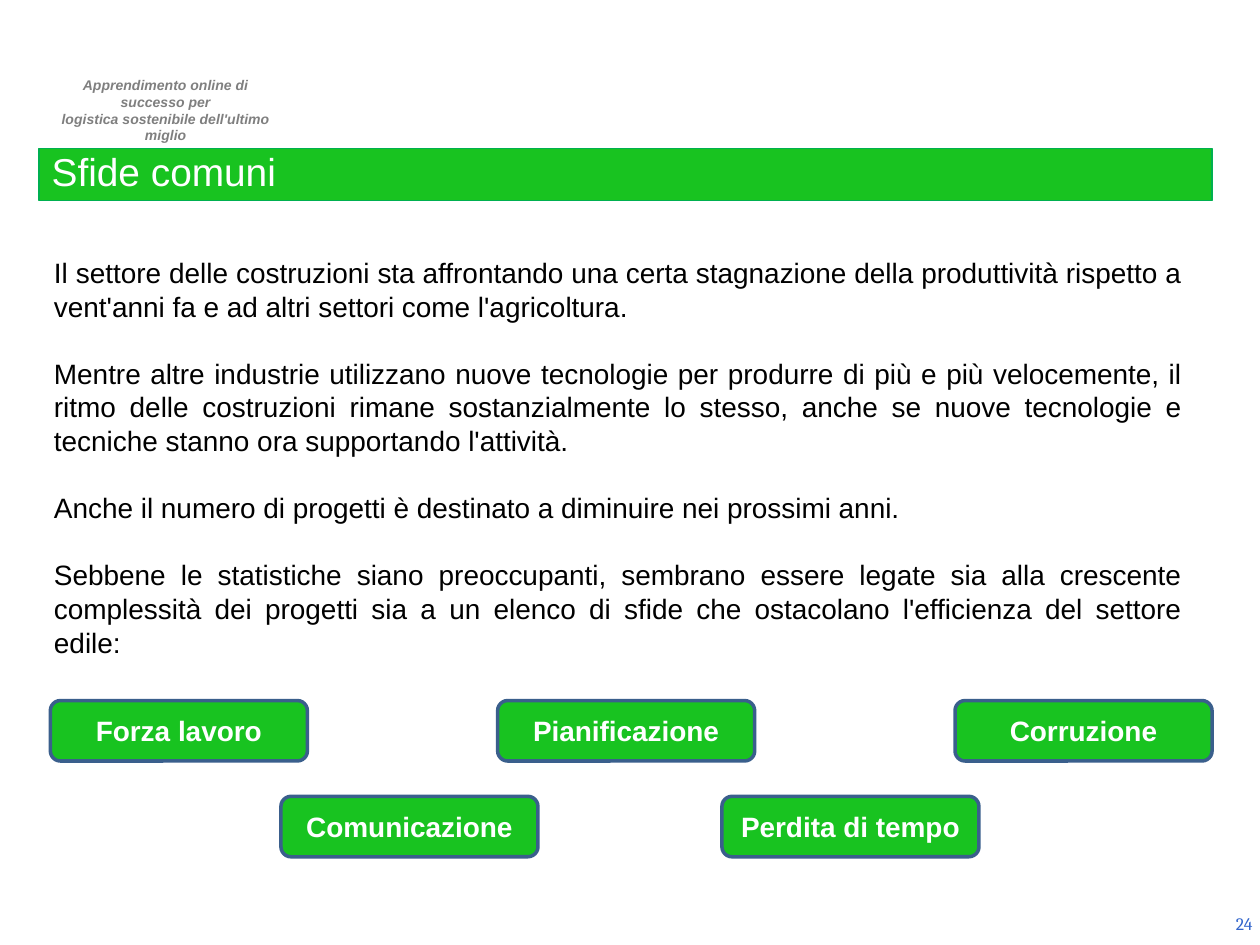
from pptx import Presentation
from pptx.dml.color import RGBColor
from pptx.enum.shapes import MSO_SHAPE
from pptx.enum.text import MSO_ANCHOR, PP_ALIGN
from pptx.util import Inches, Pt

ROUND = MSO_SHAPE.ROUNDED_RECTANGLE
MIDDLE, BOTTOM, TOP = MSO_ANCHOR.MIDDLE, MSO_ANCHOR.BOTTOM, MSO_ANCHOR.TOP
LEFT, CENTER, RIGHT, JUST = (PP_ALIGN.LEFT, PP_ALIGN.CENTER,
                             PP_ALIGN.RIGHT, PP_ALIGN.JUSTIFY)
GREEN, WHITE = "18C320", "FFFFFF"

# Content
TITLE = "Sfide comuni"
HEADER = ["Apprendimento online di successo per",
          "logistica sostenibile dell'ultimo miglio"]
BODY = [
    "Il settore delle costruzioni sta affrontando una certa stagnazione della "
    "produttività rispetto a vent'anni fa e ad altri settori come l'agricoltura.",
    "Mentre altre industrie utilizzano nuove tecnologie per produrre di più e "
    "più velocemente, il ritmo delle costruzioni rimane sostanzialmente lo "
    "stesso, anche se nuove tecnologie e tecniche stanno ora supportando "
    "l'attività.",
    "Anche il numero di progetti è destinato a diminuire nei prossimi anni.",
    "Sebbene le statistiche siano preoccupanti, sembrano essere legate sia alla "
    "crescente complessità dei progetti sia a un elenco di sfide che ostacolano "
    "l'efficienza del settore edile:",
]
# Each row: top, then (left, label) for its boxes
ROWS = [
    (5.56, [(0.4, "Forza lavoro"), (3.95, "Pianificazione"), (7.58, "Corruzione")]),
    (6.32, [(2.23, "Comunicazione"), (5.73, "Perdita di tempo")]),
]
BOX_W, BOX_H = 2.04, 0.48


def color(code):
    return RGBColor.from_string(code)


def paint(shape, fill, line, width):
    shape.fill.solid()
    shape.fill.fore_color.rgb = color(fill)
    shape.line.color.rgb = color(line)
    shape.line.width = Pt(width)


def write(shape, lines, size, ink, align, anchor=TOP, face="Arial",
          bold=False, italic=False, pitch=None, gap=0):
    frame = shape.text_frame
    frame.word_wrap = True
    frame.vertical_anchor = anchor
    frame.text = "\n".join(lines)
    for i, para in enumerate(frame.paragraphs):
        para.alignment = align
        para.line_spacing = pitch
        para.space_before = Pt(gap if i else 0)
        font = para.font
        font.name, font.size = face, Pt(size)
        font.bold, font.italic = bold, italic
        font.color.rgb = color(ink)


prs = Presentation()
prs.slide_width, prs.slide_height = Inches(10), Inches(7.5)
slide = prs.slides.add_slide(prs.slide_layouts[5])
shapes = slide.shapes


def text_box(x, y, w, h):
    return shapes.add_textbox(Inches(x), Inches(y), Inches(w), Inches(h))


# Header and page number
write(text_box(0.31, 0.56, 2.01, 0.37), HEADER, 8, "7F7F7F", CENTER,
      bold=True, italic=True)
write(text_box(7.71, 7.13, 2.33, 0.4), ["24"], 10, "3366CC", RIGHT, MIDDLE,
      face="Cambria")

# Title bar
title = shapes.title
title.left, title.top = Inches(0.31), Inches(1.18)
title.width, title.height = Inches(9.31), Inches(0.41)
paint(title, GREEN, "00B050", 0.75)
write(title, [TITLE], 22.2, WHITE, LEFT, BOTTOM, pitch=0.8)

# Body: one line's height between paragraphs
write(text_box(0.33, 1.98, 9.15, 3.06), BODY, 16, "000000", JUST,
      pitch=Pt(19.2), gap=19.2)

# Challenge boxes
for top, items in ROWS:
    for left, label in items:
        box = shapes.add_shape(ROUND, Inches(left), Inches(top),
                               Inches(BOX_W), Inches(BOX_H))
        box.shadow.inherit = False
        paint(box, GREEN, "3A5F8C", 2)
        write(box, [label], 16, WHITE, CENTER, MIDDLE, bold=True)

prs.save("out.pptx")
